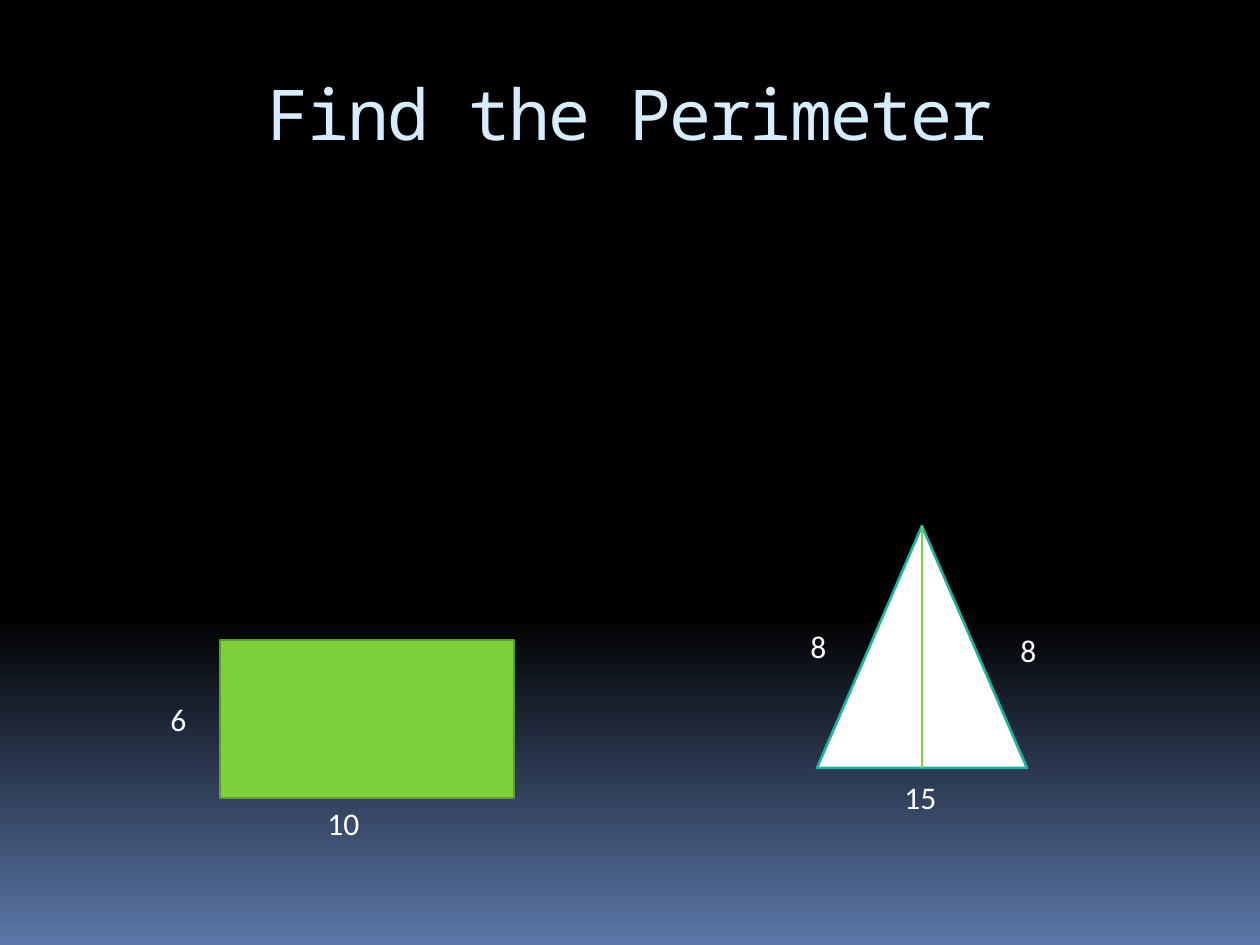
from copy import deepcopy

from pptx import Presentation
from pptx import util as u
from pptx.dml.color import RGBColor
from pptx.enum import shapes, text
from pptx.oxml import ns, xmlchemy

PX = u.Inches(1) // 126

BLACK = RGBColor(0x00, 0x00, 0x00)
WHITE = RGBColor(0xFF, 0xFF, 0xFF)
DUSK_BLUE = RGBColor(0x5B, 0x77, 0xA8)
PALE_BLUE = RGBColor(0xD6, 0xEC, 0xFF)
GREEN = RGBColor(0x7F, 0xD1, 0x3B)
DARK_GREEN = RGBColor(0x5E, 0x9B, 0x2C)
TEAL = RGBColor(0x1A, 0xB3, 0x9F)

# Side lengths: wording, left, top, width
SIDE_LABELS = [
    ("10", 315, 798, 158),
    ("6", 158, 694, 105),
    ("15", 892, 772, 116),
    ("8", 798, 621, 95),
    ("8", 1008, 625, 105),
]


def px(*lengths):
    return [u.Emu(length * PX) for length in lengths]


def paint_background(page):
    """Black down to 65 % of the height, then fading to blue."""
    fill = page.background.fill
    fill.gradient()
    fill.gradient_angle = 270
    stop_list = page.element.find(".//" + ns.qn("a:gsLst"))
    stop_list.insert(0, deepcopy(stop_list[0]))
    stops = [(0, BLACK), (0.65, BLACK), (1, DUSK_BLUE)]
    for stop, (position, color) in zip(fill.gradient_stops, stops):
        stop.position = position
        stop.color.rgb = color


def add_text(page, wording, bounds, font, size, color):
    box = page.shapes.add_textbox(*px(*bounds))
    box.text_frame.word_wrap = True
    para = box.text_frame.paragraphs[0]
    para.text = wording
    para.font.name = font
    para.font.size = u.Pt(size)
    para.font.color.rgb = color
    return box


def add_title(page, wording):
    box = add_text(page, wording, (63, 71, 1134, 126), "Noto Sans Mono", 40, PALE_BLUE)
    box.text_frame.margin_top = 0
    para = box.text_frame.paragraphs[0]
    para.alignment = text.PP_ALIGN.CENTER
    para.runs[0]._r.get_or_add_rPr().set("spc", "-100")


def add_side_label(page, wording, left, top, width):
    box = add_text(page, wording, (left, top, width, 51), "Calibri", 18, WHITE)
    box.text_frame.auto_size = text.MSO_AUTO_SIZE.SHAPE_TO_FIT_TEXT


def add_figure(page, kind, bounds, fill_color, line_color):
    figure = page.shapes.add_shape(kind, *px(*bounds))
    figure.shadow.inherit = False
    figure.fill.solid()
    figure.fill.fore_color.rgb = fill_color
    figure.line.color.rgb = line_color
    figure.line.width = u.Pt(1.5)


def add_height_line(page, x, top, bottom):
    line = page.shapes.add_connector(
        shapes.MSO_CONNECTOR.STRAIGHT, *px(x, top, x, bottom)
    )
    line.line.color.rgb = GREEN
    line.line.width = u.Pt(0.94)
    line._element.spPr.append(xmlchemy.OxmlElement("a:effectLst"))


def main():
    deck = Presentation()
    deck.slide_width, deck.slide_height = px(1260, 945)
    page = deck.slides.add_slide(deck.slide_layouts[6])
    paint_background(page)
    add_title(page, "Find the Perimeter")

    kinds = shapes.MSO_SHAPE
    add_figure(page, kinds.RECTANGLE, (220, 640, 294, 158), GREEN, DARK_GREEN)
    add_figure(page, kinds.ISOSCELES_TRIANGLE, (817, 526, 210, 242), WHITE, TEAL)
    for label in SIDE_LABELS:
        add_side_label(page, *label)
    add_height_line(page, 922, 526, 768)

    deck.save("out.pptx")


if __name__ == "__main__":
    main()
